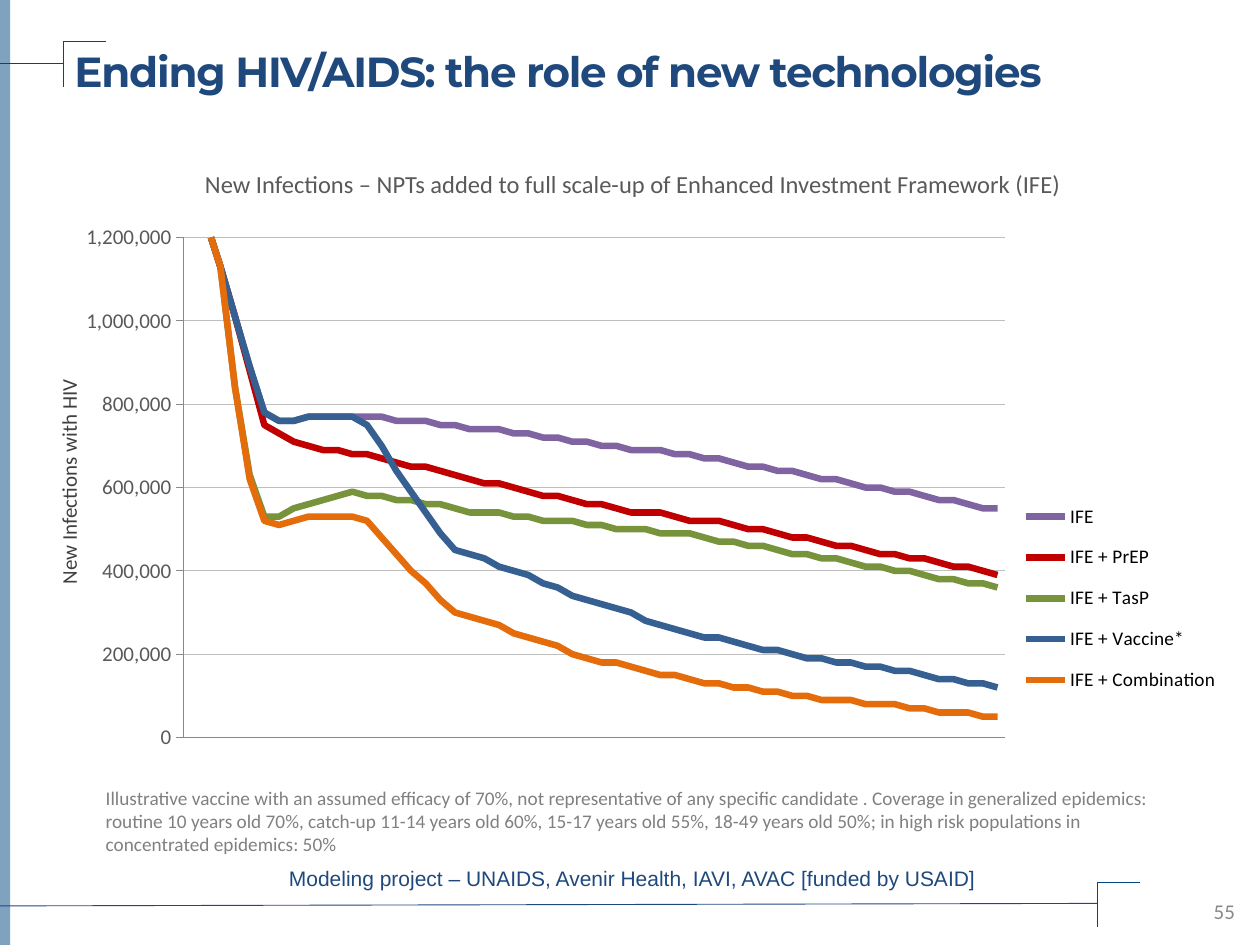
from lxml.etree import SubElement
from pptx import Presentation
from pptx.chart.data import CategoryChartData
from pptx.dml.color import RGBColor
from pptx.enum.chart import XL_CHART_TYPE, XL_LEGEND_POSITION, XL_TICK_LABEL_POSITION, XL_TICK_MARK
from pptx.enum.shapes import MSO_CONNECTOR, MSO_SHAPE
from pptx.enum.text import MSO_ANCHOR, MSO_AUTO_SIZE, PP_ALIGN
from pptx.oxml.ns import qn
from pptx.util import Inches, Pt

NAVY = "1F497D"
FRAME_BLUE = "004681"
AXIS_GRAY = "595959"

UNIT = 10000
LAST_YEAR = 55
SHARED_START = {0: 149, 1: 124, 2: 113}
SERIES = [
    ("IFE", "8064A2",
     {5: 77.6, 6: 76, 8: 77, 12: 77, 20: 74, 36: 66.7, 50: 58, 55: 54.7}),
    ("IFE + PrEP", "C00000",
     {3: 101, 5: 75.4, 6: 72.7, 9: 69, 12: 67.8, 24: 58.3, 30: 54.5, 36: 51.5, 55: 39.3}),
    ("IFE + TasP", "77933C",
     {3: 84, 4: 63, 5: 53.4, 6: 53, 8: 56.5, 11: 58.8, 20: 53.9, 34: 48.6, 55: 36.1}),
    ("IFE + Vaccine*", "376092",
     {5: 77.6, 6: 76, 8: 77, 11: 77, 12: 75, 17: 48.6, 18: 45, 20: 42.7,
      27: 33, 34: 25, 41: 20, 55: 12.3}),
    ("IFE + Combination", "E46C0A",
     {3: 84, 4: 62, 5: 52, 6: 51, 8: 53, 11: 53, 12: 51.6, 17: 32.8, 18: 30.4,
      27: 19, 34: 14, 41: 10, 55: 5}),
]


def color(value):
    return RGBColor.from_string(value)


def style_font(font, size, value, name="Calibri"):
    font.size = Pt(size)
    font.name = name
    font.color.rgb = color(value)


def yearly_values(turns):
    points = list((SHARED_START | turns).items())
    values = [points[0][1] * UNIT]
    for (start, low), (end, high) in zip(points, points[1:]):
        slope = (high - low) / (end - start)
        values += [round(low + slope * step) * UNIT for step in range(1, end - start + 1)]
    return values


def add_side_bar(page):
    bar = page.shapes.add_shape(MSO_SHAPE.RECTANGLE, 0, 0, Inches(0.08), Inches(7.5))
    bar.shadow.inherit = False
    bar.fill.solid()
    bar.fill.fore_color.rgb = color(FRAME_BLUE)
    bar.line.fill.background()
    fill_color = bar.fill._xPr.find(qn("a:solidFill"))[0]
    SubElement(fill_color, qn("a:alpha"), val="50000")


def add_line(page, left, top, right, bottom, value=FRAME_BLUE):
    line = page.shapes.add_connector(
        MSO_CONNECTOR.STRAIGHT, Inches(left), Inches(top), Inches(right), Inches(bottom))
    line.line.color.rgb = color(value)
    line.line.width = Pt(0.5)
    SubElement(line._element.spPr, qn("a:effectLst"))


def add_corner(page, left, top):
    add_line(page, left, top, left + 0.34, top)
    add_line(page, left, top + 0.36, left, top)


def add_title(page, text):
    title = page.shapes.title
    title.left, title.top = Inches(0.59), Inches(0.36)
    title.width, title.height = Inches(8.9), Inches(0.4)
    frame = title.text_frame
    frame.text = text
    frame.auto_size = MSO_AUTO_SIZE.NONE
    frame.vertical_anchor = MSO_ANCHOR.TOP
    frame.margin_left = frame.margin_right = frame.margin_top = frame.margin_bottom = 0
    para = frame.paragraphs[0]
    para.alignment = PP_ALIGN.LEFT
    span = para.runs[0]
    style_font(span.font, 24, NAVY, "Montserrat")
    span.font.bold = True
    span.font._element.set("spc", "-70")


def add_text(page, text, left, top, width, height, size, value,
             align=PP_ALIGN.LEFT, name="Calibri"):
    box = page.shapes.add_textbox(Inches(left), Inches(top), Inches(width), Inches(height))
    box.text_frame.word_wrap = True
    box.text_frame.text = text
    para = box.text_frame.paragraphs[0]
    para.alignment = align
    style_font(para.runs[0].font, size, value, name)
    return box


def place_manually(element, left, top, width, height, inner=False):
    layout = element.find(qn("c:layout"))
    if layout is None:
        layout = element.makeelement(qn("c:layout"))
        position = element.find(qn("c:legendPos"))
        if position is None:
            element.insert(0, layout)
        else:
            position.addnext(layout)
    for child in list(layout):
        layout.remove(child)
    manual = SubElement(layout, qn("c:manualLayout"))
    if inner:
        SubElement(manual, qn("c:layoutTarget"), val="inner")
    for mode in ("xMode", "yMode"):
        SubElement(manual, qn(f"c:{mode}"), val="edge")
    for key, share in zip("xywh", (left, top, width, height)):
        SubElement(manual, qn(f"c:{key}"), val=str(share))


def style_axes(chart):
    years = chart.category_axis
    years.tick_label_position = XL_TICK_LABEL_POSITION.NONE
    years.major_tick_mark = XL_TICK_MARK.NONE
    infections = chart.value_axis
    infections.minimum_scale, infections.maximum_scale = 0, 1200000
    infections.major_unit = 200000
    infections.major_tick_mark = XL_TICK_MARK.OUTSIDE
    infections.tick_labels.number_format = "#,##0"
    infections.tick_labels.number_format_is_linked = False
    style_font(infections.tick_labels.font, 12, AXIS_GRAY)
    grid = infections.major_gridlines.format.line
    grid.color.rgb = color("BFBFBF")
    grid.width = Pt(0.75)
    for axis in (years, infections):
        axis.format.line.color.rgb = color("898989")
        axis.format.line.width = Pt(0.75)


def add_infections_chart(page):
    data = CategoryChartData()
    data.categories = [str(2015 + offset) for offset in range(LAST_YEAR + 1)]
    for name, _, turns in SERIES:
        data.add_series(name, yearly_values(turns))
    chart = page.shapes.add_chart(
        XL_CHART_TYPE.LINE, Inches(0.54), Inches(1.75), Inches(9.18), Inches(4.51), data).chart
    chart.has_title = False
    style_font(chart.font, 12, "000000")
    style_axes(chart)
    chart.plots[0].vary_by_categories = False
    for series, (_, value, _) in zip(chart.plots[0].series, SERIES):
        series.smooth = False
        series.format.line.color.rgb = color(value)
        series.format.line.width = Pt(3.75)
    chart.has_legend = True
    chart.legend.position = XL_LEGEND_POSITION.RIGHT
    chart.legend.include_in_layout = False
    style_font(chart.legend.font, 11, "000000")
    place_manually(chart._chartSpace.chart.plotArea, 0.1, 0.03, 0.71, 0.88, inner=True)
    place_manually(chart.legend._element, 0.82, 0.47, 0.18, 0.39)


def main():
    deck = Presentation()
    deck.slide_width, deck.slide_height = Inches(10), Inches(7.5)
    page = deck.slides.add_slide(deck.slide_layouts[5])
    add_side_bar(page)
    add_line(page, 0, 0.5, 0.5, 0.5)
    add_corner(page, 0.5, 0.33)
    add_corner(page, 8.71, 7)
    add_line(page, 8.71, 7.17, 0, 7.19, NAVY)
    add_title(page, "Ending HIV/AIDS: the role of new technologies")
    add_text(page, "New Infections – NPTs added to full scale-up of Enhanced Investment Framework (IFE)",
             0.36, 1.29, 9.33, 0.34, 14, AXIS_GRAY, PP_ALIGN.CENTER)
    number = add_text(page, "55", 7.57, 7.03, 2.33, 0.4, 12, "898989", PP_ALIGN.RIGHT)
    number.text_frame.vertical_anchor = MSO_ANCHOR.MIDDLE
    axis_title = add_text(page, "New Infections with HIV", -0.39, 3.65, 1.87, 0.3, 12, "404040")
    axis_title.rotation = 270
    add_infections_chart(page)
    add_text(page, "Illustrative vaccine with an assumed efficacy of 70%, not representative of any "
             "specific candidate . Coverage in generalized epidemics: routine 10 years old 70%, "
             "catch-up 11-14 years old 60%, 15-17 years old 55%, 18-49 years old 50%; in high risk "
             "populations in concentrated epidemics: 50%", 0.74, 6.19, 8.62, 0.66, 11, "808080")
    add_text(page, "Modeling project – UNAIDS, Avenir Health, IAVI, AVAC [funded by USAID]",
             1.64, 6.82, 6.76, 0.3, 12, NAVY, PP_ALIGN.CENTER, "Arial")
    deck.save("out.pptx")


if __name__ == "__main__":
    main()
